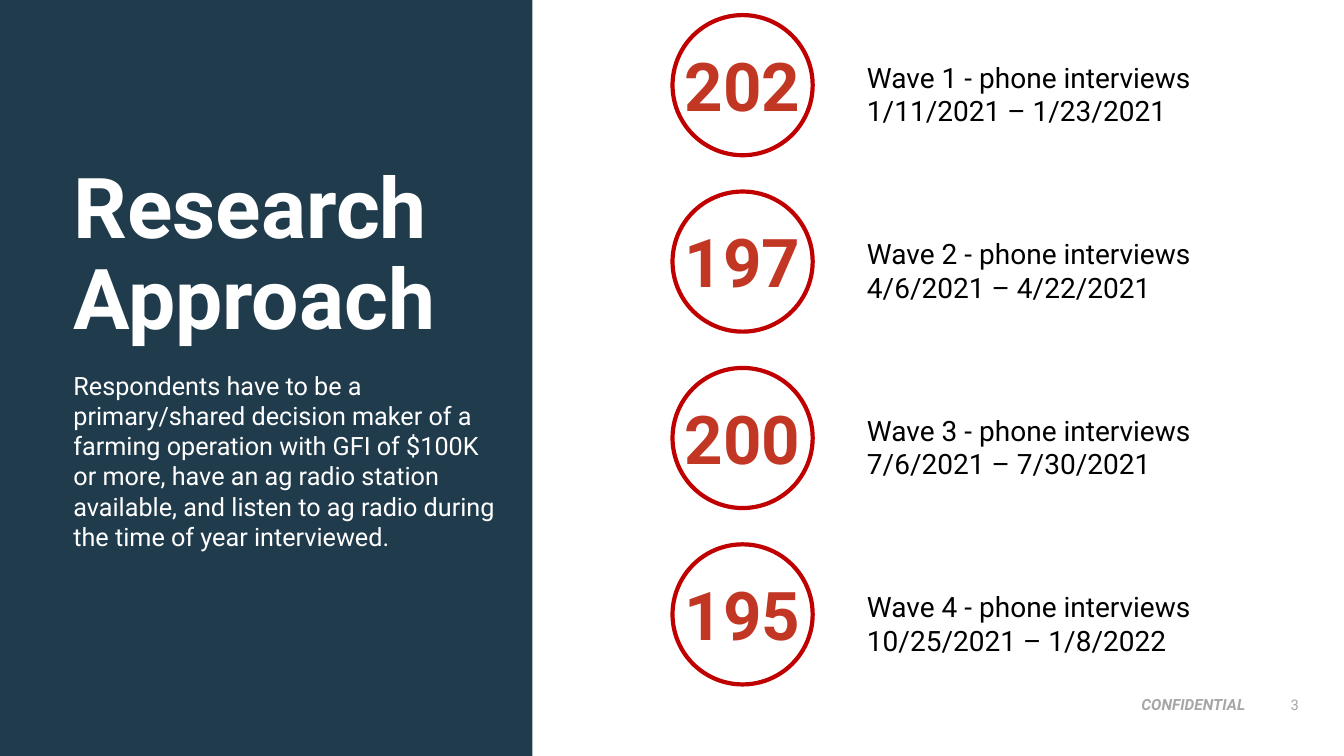
from dataclasses import dataclass

from pptx import Presentation
from pptx.dml.color import RGBColor
from pptx.enum.shapes import MSO_SHAPE
from pptx.enum.text import MSO_ANCHOR, MSO_AUTO_SIZE, PP_ALIGN
from pptx.util import Inches, Pt

OVAL, RECTANGLE = MSO_SHAPE.OVAL, MSO_SHAPE.RECTANGLE
TOP, MIDDLE = MSO_ANCHOR.TOP, MSO_ANCHOR.MIDDLE
LEFT, CENTER, RIGHT = PP_ALIGN.LEFT, PP_ALIGN.CENTER, PP_ALIGN.RIGHT
NO_AUTOFIT = MSO_AUTO_SIZE.NONE
TITLE_ONLY = 5


@dataclass(frozen=True)
class Theme:
    """Font, colours and type sizes of the deck."""
    font: str = "Roboto"
    panel: str = "203C4C"
    ring: str = "C00000"
    count: str = "C23724"
    light: str = "FFFFFF"
    dark: str = "000000"
    footer: str = "A6A6A6"
    number: str = "A5A5A5"
    title_size: float = 60
    count_size: float = 48
    wave_size: float = 20
    body_size: float = 18
    footer_size: float = 11
    number_size: float = 10.5


THEME = Theme()

TITLE = "Research Approach"
RESPONDENTS = (
    "Respondents have to be a primary/shared decision maker of a farming "
    "operation with GFI of $100K or more, have an ag radio station available, "
    "and listen to ag radio during the time of year interviewed."
)
WAVES = [
    ("202", "1/11/2021 – 1/23/2021"),
    ("197", "4/6/2021 – 4/22/2021"),
    ("200", "7/6/2021 – 7/30/2021"),
    ("195", "10/25/2021 – 1/8/2022"),
]
WAVE_PITCH = 1.75


def write_text(shape, text, size, color, bold=False, italic=False,
               align=LEFT, anchor=TOP):
    """Fill a shape with wrapped text in one style."""
    frame = shape.text_frame
    frame.text = text
    frame.word_wrap = True
    frame.auto_size = NO_AUTOFIT
    frame.vertical_anchor = anchor
    for para in frame.paragraphs:
        para.alignment = align
        for span in para.runs:
            font = span.font
            font.name, font.size = THEME.font, Pt(size)
            font.bold, font.italic = bold, italic
            font.color.rgb = RGBColor.from_string(color)


def add_text(shapes, left, top, width, height, *text_style, **options):
    """Add a styled text box, measured in inches."""
    box = shapes.add_textbox(Inches(left), Inches(top), Inches(width), Inches(height))
    write_text(box, *text_style, **options)


def add_title_panel(page, left, top, width, height):
    """Draw the dark panel with the title and the respondent criteria."""
    panel = page.shapes.add_shape(
        RECTANGLE, Inches(left), Inches(top), Inches(width), Inches(height))
    panel.shadow.inherit = False
    panel.fill.solid()
    panel.fill.fore_color.rgb = RGBColor.from_string(THEME.panel)
    panel.line.fill.background()

    title = page.shapes.title
    title._element.addprevious(panel._element)
    title.left, title.top = Inches(left + 0.63), Inches(top + 1.6)
    title.width, title.height = Inches(4.1), Inches(2.02)
    write_text(title, TITLE, THEME.title_size, THEME.light, bold=True)
    title.text_frame.paragraphs[0].line_spacing = 0.9

    add_text(page.shapes, left + 0.63, top + 3.62, 4.4, 1.92,
             RESPONDENTS, THEME.body_size, THEME.light)


def add_count_badge(page, left, top, diameter, count):
    """Draw a ringed interview count as one group."""
    badge = page.shapes.add_group_shape()
    ring = badge.shapes.add_shape(
        OVAL, Inches(left), Inches(top), Inches(diameter), Inches(diameter))
    ring.shadow.inherit = False
    ring.fill.background()
    ring.line.color.rgb = RGBColor.from_string(THEME.ring)
    ring.line.width = Pt(3)
    add_text(badge.shapes, left, top + 0.24, diameter, 0.91,
             count, THEME.count_size, THEME.count, bold=True, align=CENTER)


def add_waves(page, left, top):
    """Stack one badge and caption for each interview wave."""
    for index, (count, dates) in enumerate(WAVES):
        row_top = top + index * WAVE_PITCH
        add_count_badge(page, left, row_top, 1.39, count)
        add_text(page.shapes, left + 1.83, row_top + 0.4, 4.21, 0.77,
                 f"Wave {index + 1} - phone interviews\n{dates}",
                 THEME.wave_size, THEME.dark)


def add_footer(page, left, top):
    """Place the confidentiality mark and the page number."""
    add_text(page.shapes, left, top + 0.06, 1.47, 0.29, "CONFIDENTIAL",
             THEME.footer_size, THEME.footer, bold=True, italic=True, align=RIGHT)
    add_text(page.shapes, left + 1.44, top, 0.56, 0.4, "3",
             THEME.number_size, THEME.number, align=RIGHT, anchor=MIDDLE)


def main():
    """Build and save the research approach slide."""
    deck = Presentation()
    deck.slide_width, deck.slide_height = Inches(13.33), Inches(7.5)
    page = deck.slides.add_slide(deck.slide_layouts[TITLE_ONLY])
    add_title_panel(page, 0, 0, 5.28, 7.5)
    add_waves(page, 6.67, 0.15)
    add_footer(page, 10.98, 6.79)
    deck.save("out.pptx")


if __name__ == "__main__":
    main()
